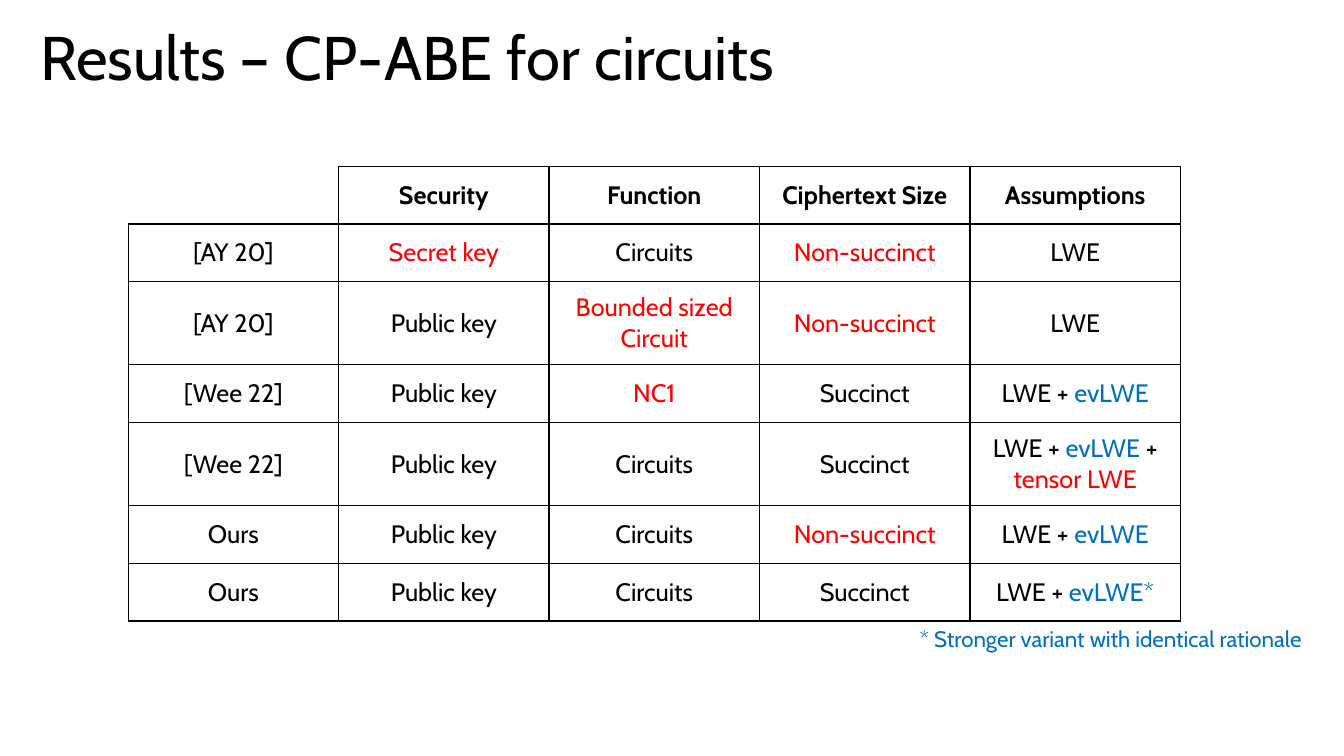
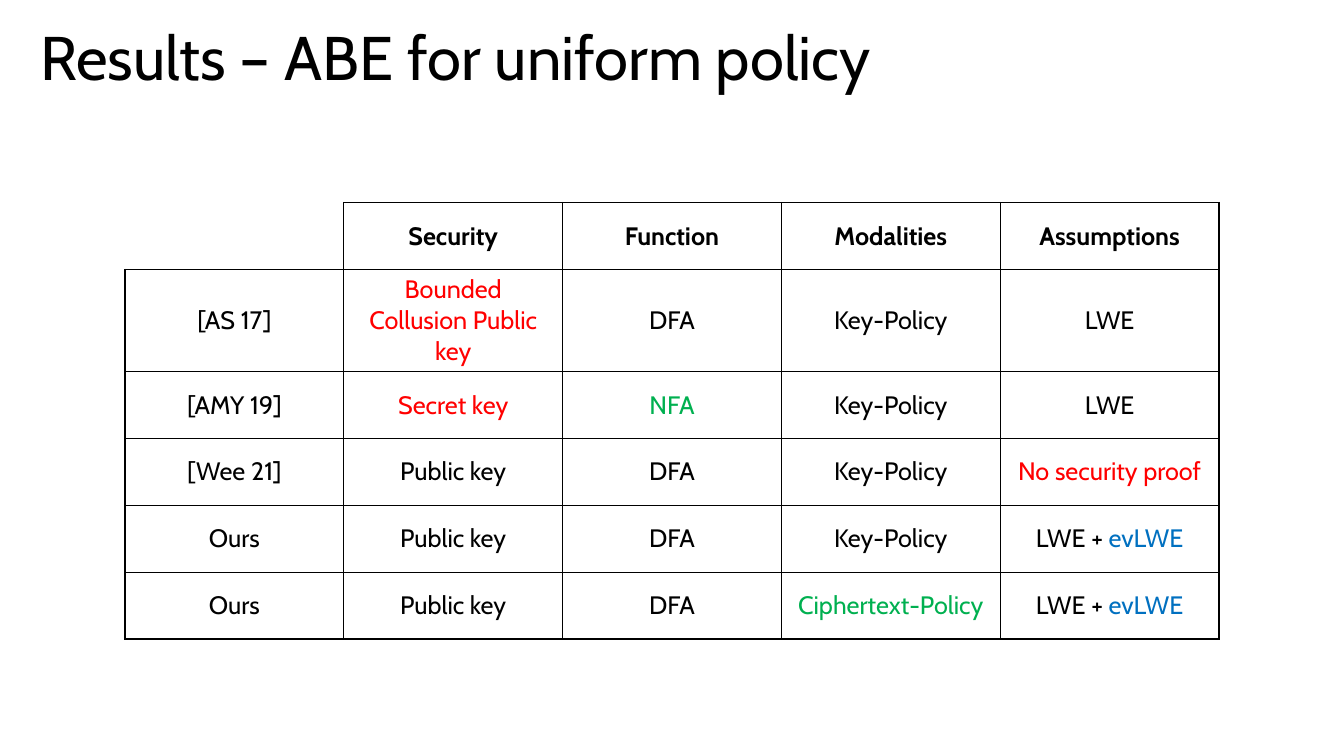
from pptx import Presentation
from pptx.dml.color import RGBColor
from pptx.enum.text import MSO_ANCHOR as Anchor, PP_ALIGN as Align
from pptx.oxml.ns import qn
from pptx.util import Inches, Pt
from lxml.etree import SubElement

FONT = "Cabin"
COLORS = {"ink": "000000", "weak": "FF0000", "strong": "00B050", "note": "0070C0"}
SLIDE_W, SLIDE_H = Inches(13.33), Inches(7.5)
TITLE_BOX = (3, 2.67, 94, 10.67)  # boxes: left, top, width, height in % of the slide
LINE_W = Pt(1)


def across(percent):
    return round(SLIDE_W * percent / 100)


def down(percent):
    return round(SLIDE_H * percent / 100)


def weak(text):
    return (text, "weak")


def strong(text):
    return (text, "strong")


def note(text):
    return (text, "note")


def write(frame, *runs, size=18, bold=False, align=Align.CENTER, anchor=Anchor.MIDDLE,
          spacing=None):
    """Write runs, each plain text or (text, colour), as one paragraph."""
    frame.vertical_anchor = anchor
    paragraph = frame.paragraphs[0]
    paragraph.alignment = align
    if spacing:
        paragraph.line_spacing = spacing
    for part in runs:
        text, color = (part, "ink") if isinstance(part, str) else part
        run = paragraph.add_run()
        run.text = text
        run.font.name, run.font.size, run.font.bold = FONT, Pt(size), bold
        run.font.color.rgb = RGBColor.from_string(COLORS[color])


def text_frame(slide, box, wrap=True, margin=None):
    left, top, width, height = box
    frame = slide.shapes.add_textbox(across(left), down(top),
                                     across(width), down(height)).text_frame
    frame.word_wrap = wrap
    if margin is not None:
        frame.margin_left = frame.margin_right = margin
        frame.margin_top = frame.margin_bottom = margin
    return frame


def set_borders(cell, sides):
    """Draw the named sides (L, R, T, B) and clear the others."""
    props = cell._tc.get_or_add_tcPr()
    for place, side in enumerate("LRTB"):
        line = SubElement(props, qn(f"a:ln{side}"), w=str(LINE_W))
        if side in sides:
            fill = SubElement(line, qn("a:solidFill"))
            SubElement(fill, qn("a:srgbClr"), val=COLORS["ink"])
        else:
            SubElement(line, qn("a:noFill"))
        props.insert(place, line)


def comparison_table(slide, origin, column, heights, headings, schemes):
    """Headings over one row per scheme, with an open top left corner."""
    rows = [["", *headings], *schemes]
    left, top = origin
    table = slide.shapes.add_table(
        len(rows), len(rows[0]), across(left), down(top),
        across(column * len(rows[0])), down(sum(heights))).table
    table.first_row = table.horz_banding = False
    for table_column in table.columns:
        table_column.width = across(column)
    for r, (height, row) in enumerate(zip(heights, rows)):
        table.rows[r].height = down(height)
        for c, content in enumerate(row):
            cell = table.cell(r, c)
            cell.fill.background()
            set_borders(cell, "LRTB" if r or c else "RB")
            if content:
                runs = content if isinstance(content, list) else [content]
                cell.vertical_anchor = Anchor.MIDDLE
                write(cell.text_frame, *runs, bold=r == 0)


def results_slide(deck, title, **table):
    slide = deck.slides.add_slide(deck.slide_layouts[6])
    write(text_frame(slide, TITLE_BOX, margin=0), title, size=44,
          align=Align.LEFT, spacing=0.9)
    comparison_table(slide, **table)
    return slide


def circuits_slide(deck):
    row, tall = 7.64, 10.98
    key, circuits, short = "Public key", "Circuits", "Succinct"
    long = weak("Non-succinct")
    slide = results_slide(
        deck, "Results – CP-ABE for circuits",
        origin=(9.53, 22), column=15.66,
        heights=[row, row, tall, row, tall, row, row],
        headings=["Security", "Function", "Ciphertext Size", "Assumptions"],
        schemes=[
            ["[AY 20]", weak("Secret key"), circuits, long, "LWE"],
            ["[AY 20]", key, weak("Bounded sized Circuit"), long, "LWE"],
            ["[Wee 22]", key, weak("NC1"), short, ["LWE + ", note("evLWE")]],
            ["[Wee 22]", key, circuits, short,
             ["LWE + ", note("evLWE "), "+ ", weak("tensor LWE")]],
            ["Ours", key, circuits, long, ["LWE + ", note("evLWE")]],
            ["Ours", key, circuits, short, ["LWE + ", note("evLWE*")]],
        ])
    # Footnote to the last row
    write(text_frame(slide, (66.32, 82, 31.28, 4.93), wrap=False),
          note("* Stronger variant with identical rationale"),
          size=16, align=Align.RIGHT, anchor=Anchor.TOP)


def uniform_policy_slide(deck):
    row, tall = 8.84, 13.53
    key, policy = "Public key", "Key-Policy"
    ours = ["LWE + ", note("evLWE")]
    results_slide(
        deck, "Results – ABE for uniform policy",
        origin=(9.3, 26.8), column=16.28,
        heights=[row, tall, row, row, row, row],
        headings=["Security", "Function", "Modalities", "Assumptions"],
        schemes=[
            ["[AS 17]", weak("Bounded Collusion Public key"), "DFA", policy, "LWE"],
            ["[AMY 19]", weak("Secret key"), strong("NFA"), policy, "LWE"],
            ["[Wee 21]", key, "DFA", policy, weak("No security proof")],
            ["Ours", key, "DFA", policy, ours],
            ["Ours", key, "DFA", strong("Ciphertext-Policy"), ours],
        ])


def main():
    deck = Presentation()
    deck.slide_width, deck.slide_height = SLIDE_W, SLIDE_H
    circuits_slide(deck)
    uniform_policy_slide(deck)
    deck.save("out.pptx")


if __name__ == "__main__":
    main()
